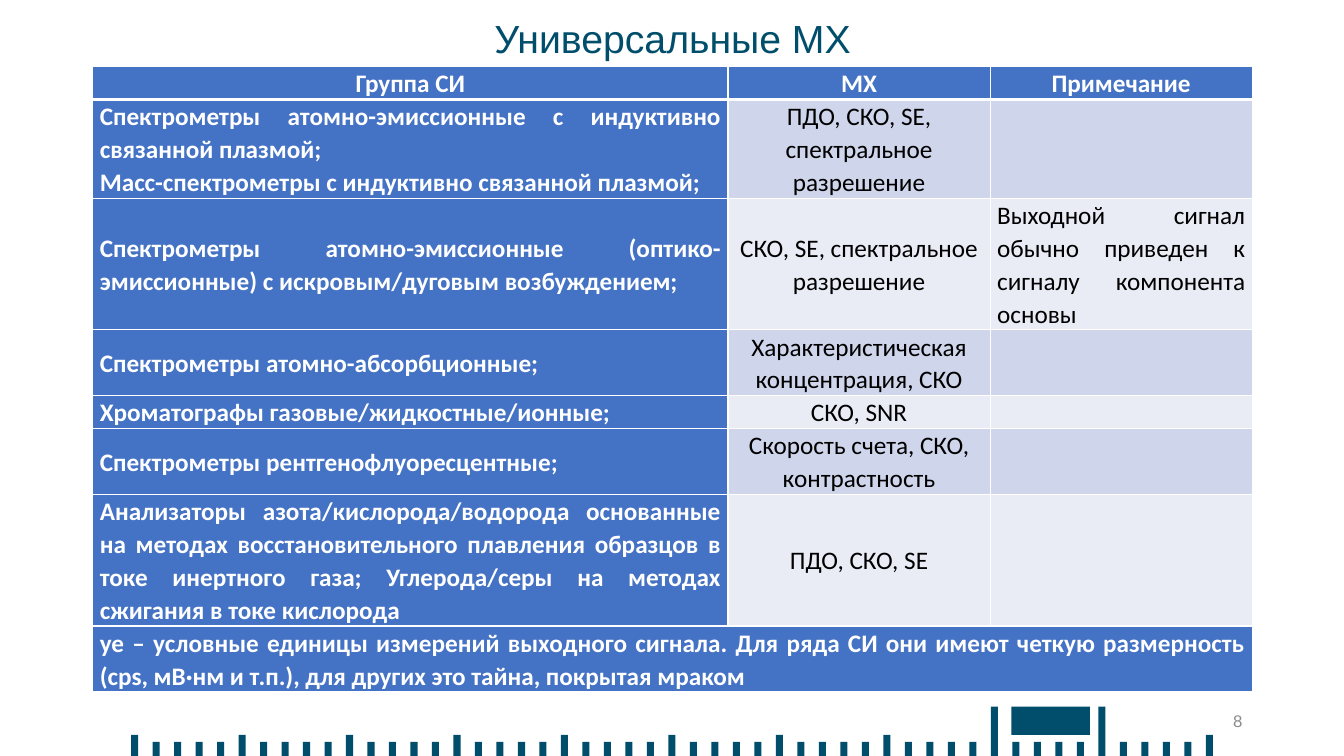
from lxml.etree import SubElement
from pptx import Presentation
from pptx.dml.color import RGBColor
from pptx.enum.shapes import MSO_SHAPE
from pptx.enum.text import MSO_ANCHOR, PP_ALIGN
from pptx.oxml.ns import qn
from pptx.util import Inches, Pt

TEAL = RGBColor(0x00, 0x4E, 0x6B)
BLUE = RGBColor(0x44, 0x72, 0xC4)
BAND_DARK = RGBColor(0xCF, 0xD5, 0xEA)
BAND_LIGHT = RGBColor(0xE9, 0xEB, 0xF5)
WHITE = RGBColor(0xFF, 0xFF, 0xFF)
BLACK = RGBColor(0x00, 0x00, 0x00)
GRAY = RGBColor(0x8C, 0x8C, 0x8C)

COLUMN_WIDTHS = (6.3, 2.6, 2.6)
LINE_HEIGHT = 0.32
HEADER = ("Группа СИ", "МХ", "Примечание")
# Instrument group, characteristics, remark, number of text lines
GROUPS = [
    ("Спектрометры атомно-эмиссионные с индуктивно связанной плазмой;\n"
     "Масс-спектрометры с индуктивно связанной плазмой;",
     "ПДО, СКО, SE, спектральное разрешение", "", 3),
    ("Спектрометры атомно-эмиссионные (оптико-эмиссионные) с искровым/дуговым возбуждением;",
     "СКО, SE, спектральное разрешение",
     "Выходной сигнал обычно приведен к сигналу компонента основы", 4),
    ("Спектрометры атомно-абсорбционные;", "Характеристическая концентрация, CКО", "", 2),
    ("Хроматографы газовые/жидкостные/ионные;", "СКО, SNR", "", 1),
    ("Спектрометры рентгенофлуоресцентные;", "Скорость счета, СКО, контрастность", "", 2),
    ("Анализаторы азота/кислорода/водорода основанные на методах восстановительного "
     "плавления образцов в токе инертного газа; Углерода/серы на методах сжигания "
     "в токе кислорода", "ПДО, СКО, SE", "", 4),
]
FOOTNOTE = ("уе – условные единицы измерений выходного сигнала. Для ряда СИ они имеют "
            "четкую размерность (cps, мВ·нм и т.п.), для других это тайна, покрытая мраком")


def style_para(para, font_name, size, color, align, spacing=1.0, bold=False):
    para.alignment = align
    para.line_spacing = spacing
    para.font.name = font_name
    para.font.size = Pt(size)
    para.font.bold = bold
    para.font.color.rgb = color


def set_title(page, text):
    title = page.shapes.title
    title.left, title.top = Inches(0.92), Inches(0.15)
    title.width, title.height = Inches(11.5), Inches(0.51)
    title.text_frame.text = text
    title.text_frame.vertical_anchor = MSO_ANCHOR.MIDDLE
    style_para(title.text_frame.paragraphs[0], "Arial", 28, TEAL, PP_ALIGN.CENTER, 0.9)


def add_block(page, left, top, width, height):
    block = page.shapes.add_shape(MSO_SHAPE.RECTANGLE, Inches(left), Inches(top),
                                  Inches(width), Inches(height))
    block.shadow.inherit = False
    block.fill.solid()
    block.fill.fore_color.rgb = TEAL
    block.line.fill.background()


def add_ruler(page):
    for tick in range(51):
        if tick in (40, 45):
            height = 0.49
        elif tick % 5 == 0:
            height = 0.21
        else:
            height = 0.14
        add_block(page, 1.3 + tick * 10.66 / 50, 7.5 - height, 0.07, height)
    # Plain emblem block between the two tall ticks
    add_block(page, 10.03, 7.01, 0.78, 0.28)


def set_borders(cell, top, bottom):
    properties = cell._tc.get_or_add_tcPr()
    for side, width in (("L", 1), ("R", 1), ("T", top), ("B", bottom)):
        line = SubElement(properties, qn(f"a:ln{side}"), w=str(Pt(width)))
        fill = SubElement(line, qn("a:solidFill"))
        SubElement(fill, qn("a:srgbClr"), val=str(WHITE))


def fill_cell(cell, text, fill, align, anchor=MSO_ANCHOR.MIDDLE, top=1, bottom=1):
    set_borders(cell, top, bottom)
    cell.fill.solid()
    cell.fill.fore_color.rgb = fill
    cell.margin_left = cell.margin_right = Inches(0.07)
    cell.margin_top = cell.margin_bottom = 0
    cell.vertical_anchor = anchor
    cell.text = text
    on_blue = fill == BLUE
    for para in cell.text_frame.paragraphs:
        style_para(para, "Calibri", 18, WHITE if on_blue else BLACK, align, 1.07, on_blue)


def add_groups_table(page):
    lines = [1] + [group[-1] for group in GROUPS] + [2]
    frame = page.shapes.add_table(len(lines), 3, Inches(0.92), Inches(0.66),
                                  Inches(11.5), Inches(LINE_HEIGHT * sum(lines)))
    table = frame.table
    for column, width in zip(table.columns, COLUMN_WIDTHS):
        column.width = Inches(width)
    for row, count in zip(table.rows, lines):
        row.height = Inches(LINE_HEIGHT * count)

    # Header row
    for index, text in enumerate(HEADER):
        fill_cell(table.cell(0, index), text, BLUE, PP_ALIGN.CENTER, MSO_ANCHOR.TOP, bottom=3)

    # Instrument groups
    for index, (group, values, remark, _) in enumerate(GROUPS, start=1):
        band = BAND_DARK if index % 2 else BAND_LIGHT
        top = 3 if index == 1 else 1
        fill_cell(table.cell(index, 0), group, BLUE, PP_ALIGN.JUSTIFY, top=top)
        fill_cell(table.cell(index, 1), values, band, PP_ALIGN.CENTER, top=top)
        fill_cell(table.cell(index, 2), remark, band, PP_ALIGN.JUSTIFY, MSO_ANCHOR.TOP, top)

    # Footnote across all columns
    last = len(lines) - 1
    table.cell(last, 0).merge(table.cell(last, 2))
    fill_cell(table.cell(last, 0), FOOTNOTE, BLUE, PP_ALIGN.JUSTIFY, MSO_ANCHOR.TOP)


def add_page_number(page, number):
    box = page.shapes.add_textbox(Inches(9.42), Inches(6.95), Inches(3), Inches(0.4))
    box.text_frame.word_wrap = True
    box.text_frame.vertical_anchor = MSO_ANCHOR.MIDDLE
    box.text_frame.text = number
    style_para(box.text_frame.paragraphs[0], "Arial", 12, GRAY, PP_ALIGN.RIGHT)


def main():
    deck = Presentation()
    deck.slide_width, deck.slide_height = Inches(13.33), Inches(7.5)
    page = deck.slides.add_slide(deck.slide_layouts[5])
    set_title(page, "Универсальные МХ")
    add_ruler(page)
    add_groups_table(page)
    add_page_number(page, "8")
    deck.save("out.pptx")


if __name__ == "__main__":
    main()
